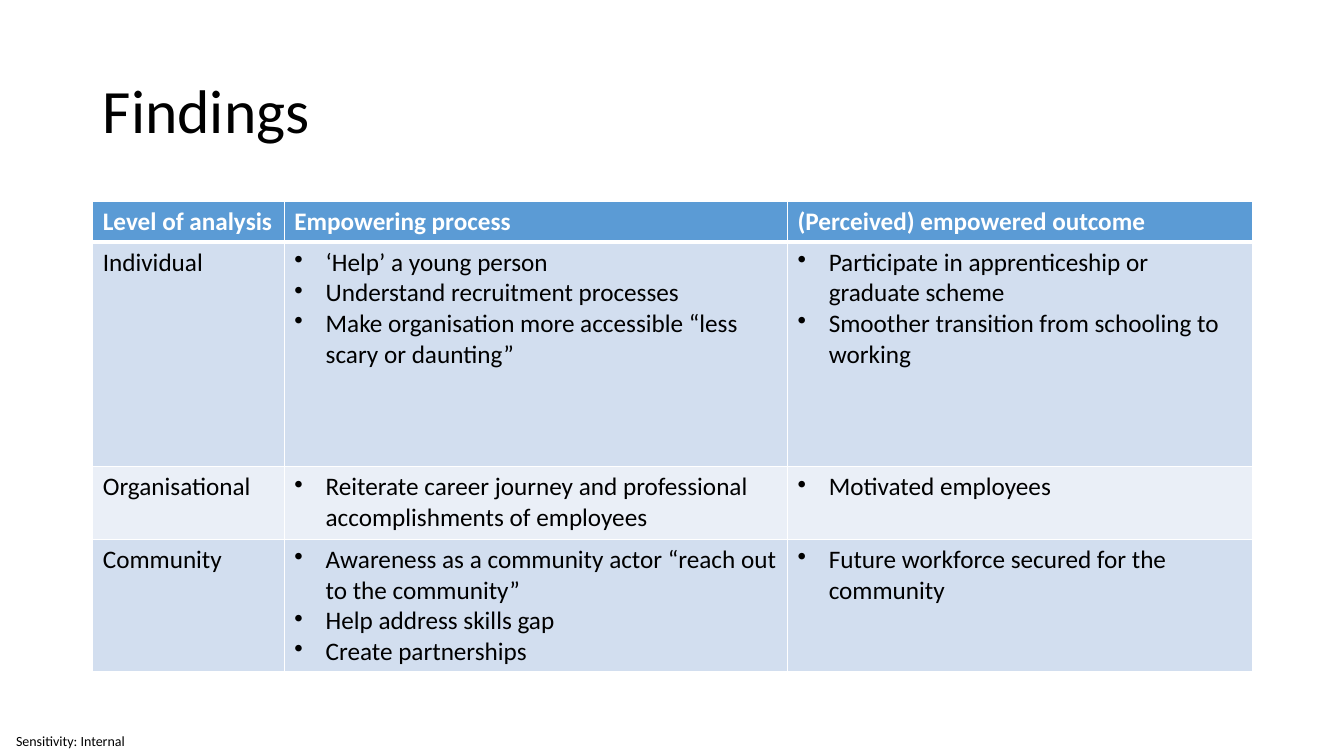
from dataclasses import dataclass

from lxml import etree
from pptx import Presentation
from pptx import util as u
from pptx.dml.color import RGBColor
from pptx.enum import text
from pptx.oxml import ns


@dataclass(frozen=True)
class Theme:
    font: str = "Calibri"
    ink: str = "000000"
    white: str = "FFFFFF"
    header: str = "5B9BD5"
    bands: tuple = ("D2DEEF", "EAEFF7")
    title_size: int = 44
    table_size: int = 18
    label_size: int = 10
    thin: int = 1
    thick: int = 3


HEADINGS = ["Level of analysis", "Empowering process", "(Perceived) empowered outcome"]
FINDINGS = [
    ("Individual",
     ["‘Help’ a young person", "Understand recruitment processes",
      "Make organisation more accessible “less scary or daunting”"],
     ["Participate in apprenticeship or graduate scheme",
      "Smoother transition from schooling to working"]),
    ("Organisational",
     ["Reiterate career journey and professional accomplishments of employees"],
     ["Motivated employees"]),
    ("Community",
     ["Awareness as a community actor “reach out to the community”",
      "Help address skills gap", "Create partnerships"],
     ["Future workforce secured for the community"]),
]
COLUMN_WIDTHS = [1.9, 4.99, 4.61]
ROW_HEIGHTS = [0.4, 2.23, 0.72, 1.31]


class FindingsPage:
    def __init__(self, deck, theme):
        self.theme = theme
        self.page = deck.slides.add_slide(deck.slide_layouts[5])

    def style(self, para, size, color, bold=False):
        para.font.name = self.theme.font
        para.font.size = u.Pt(size)
        para.font.color.rgb = RGBColor.from_string(color)
        para.font.bold = bold

    def title(self, words, left, top, width, height):
        box = self.page.shapes.title
        box.left, box.top = u.Inches(left), u.Inches(top)
        box.width, box.height = u.Inches(width), u.Inches(height)
        box.text_frame.text = words
        box.text_frame.vertical_anchor = text.MSO_ANCHOR.MIDDLE
        para = box.text_frame.paragraphs[0]
        para.alignment = text.PP_ALIGN.LEFT
        para.line_spacing = 0.9
        self.style(para, self.theme.title_size, self.theme.ink)

    def label(self, words, left, top, width, height, indent):
        box = self.page.shapes.add_textbox(*map(u.Inches, (left, top, width, height)))
        frame = box.text_frame
        frame.word_wrap = True
        frame.vertical_anchor = text.MSO_ANCHOR.MIDDLE
        frame.margin_left = u.Inches(indent)
        frame.margin_top = frame.margin_right = frame.margin_bottom = 0
        frame.text = words
        self.style(frame.paragraphs[0], self.theme.label_size, self.theme.ink)

    def table(self, headings, findings, left, top, widths, heights):
        frame = self.page.shapes.add_table(
            len(heights), len(widths), u.Inches(left), u.Inches(top),
            u.Inches(sum(widths)), u.Inches(sum(heights)))
        grid = frame.table
        for column, width in zip(grid.columns, widths):
            column.width = u.Inches(width)
        for row, height in zip(grid.rows, heights):
            row.height = u.Inches(height)
        for r, contents in enumerate([headings, *findings]):
            for c, content in enumerate(contents):
                self.cell(grid.cell(r, c), r, content)

    def cell(self, cell, row, content):
        theme = self.theme
        is_header = row == 0
        fill = theme.header if is_header else theme.bands[(row - 1) % 2]
        cell.fill.solid()
        cell.fill.fore_color.rgb = RGBColor.from_string(fill)
        bulleted = isinstance(content, list)
        cell.text_frame.text = "\n".join(content) if bulleted else content
        for para in cell.text_frame.paragraphs:
            self.style(para, theme.table_size,
                       theme.white if is_header else theme.ink, is_header)
            if bulleted:
                self.bullet(para)
        self.borders(cell, {"lnL": theme.thin, "lnR": theme.thin,
                            "lnT": theme.thick if row == 1 else theme.thin,
                            "lnB": theme.thick if is_header else theme.thin})

    def bullet(self, para, indent=0.31):
        properties = para._p.get_or_add_pPr()
        properties.set("marL", str(u.Inches(indent)))
        properties.set("indent", str(-u.Inches(indent)))
        mark = etree.Element(ns.qn("a:buChar"), char="•")
        # The bullet mark belongs before the default run properties
        properties.insert(len(properties) - 1, mark)

    def borders(self, cell, weights):
        properties = cell._tc.get_or_add_tcPr()
        for position, (side, weight) in enumerate(weights.items()):
            line = etree.Element(ns.qn(f"a:{side}"), w=str(u.Pt(weight)))
            paint = etree.SubElement(line, ns.qn("a:solidFill"))
            etree.SubElement(paint, ns.qn("a:srgbClr"), val=self.theme.white)
            properties.insert(position, line)


def main():
    deck = Presentation()
    deck.slide_width, deck.slide_height = u.Inches(13.33), u.Inches(7.5)
    findings_page = FindingsPage(deck, Theme())

    # Sensitivity label and title
    findings_page.label("Sensitivity: Internal", 0, 7.21, 1.4, 0.29, indent=0.16)
    findings_page.title("Findings", 0.92, 0.4, 11.5, 1.45)

    # Findings by level of analysis
    findings_page.table(HEADINGS, FINDINGS, 0.92, 2, COLUMN_WIDTHS, ROW_HEIGHTS)

    deck.save("out.pptx")


if __name__ == "__main__":
    main()
